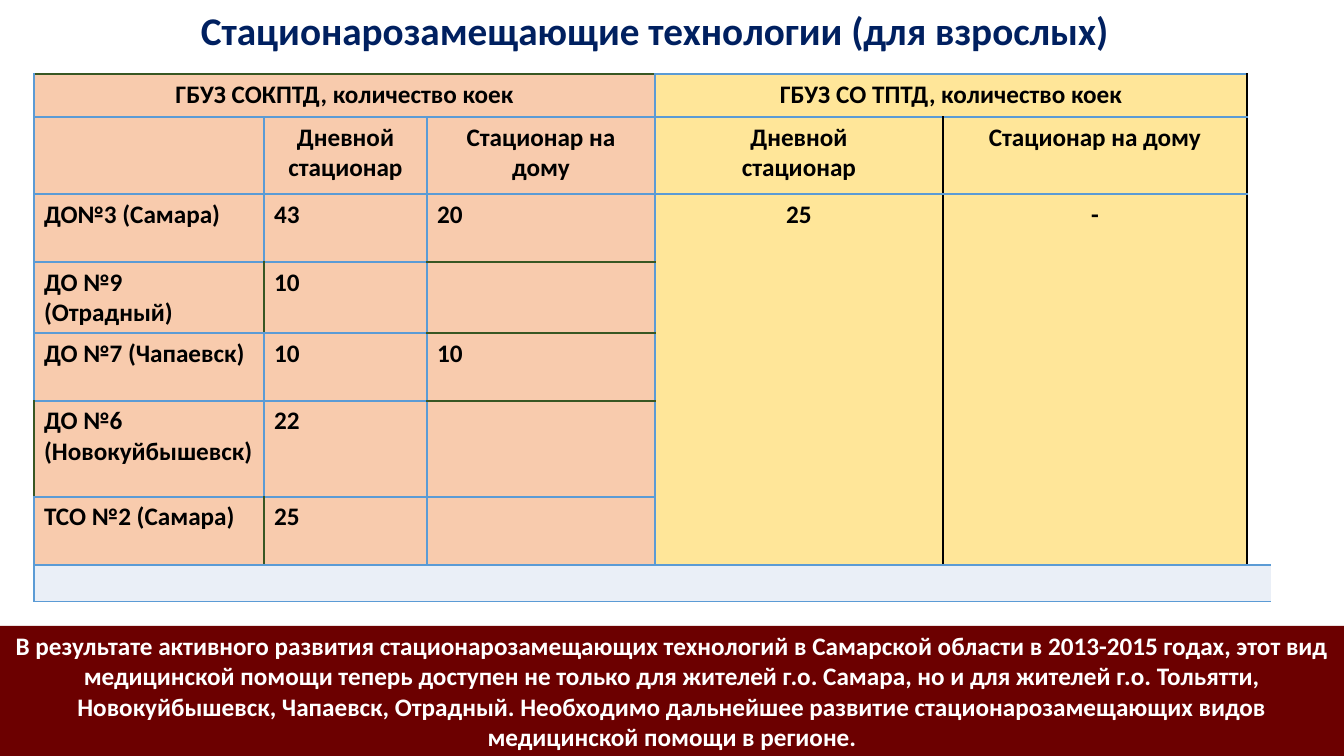
from lxml import etree
from pptx import Presentation
from pptx.dml.color import RGBColor
from pptx.enum.shapes import MSO_SHAPE
from pptx.enum.text import MSO_ANCHOR, PP_ALIGN
from pptx.oxml.ns import qn
from pptx.util import Emu, Pt

RECT = MSO_SHAPE.RECTANGLE
MIDDLE = MSO_ANCHOR.MIDDLE
LEFT, CENTER = PP_ALIGN.LEFT, PP_ALIGN.CENTER

FONT = "Calibri"
NAVY = RGBColor(0x00, 0x20, 0x60)
MAROON = RGBColor(0x6C, 0x00, 0x00)
PEACH = RGBColor(0xF8, 0xCB, 0xAD)
YELLOW = RGBColor(0xFF, 0xE6, 0x99)
PALE = RGBColor(0xEA, 0xEF, 0xF7)
WHITE = RGBColor(0xFF, 0xFF, 0xFF)
BLACK = RGBColor(0x00, 0x00, 0x00)
BLUE = RGBColor(0x5B, 0x9B, 0xD5)
GREEN = RGBColor(0x38, 0x57, 0x23)

TITLE = "Стационарозамещающие технологии (для взрослых)"
SUMMARY = (
    "В результате активного развития стационарозамещающих технологий в "
    "Самарской области в 2013-2015 годах, этот вид медицинской помощи теперь "
    "доступен не только для жителей г.о. Самара, но и для жителей г.о. "
    "Тольятти, Новокуйбышевск, Чапаевск, Отрадный. Необходимо дальнейшее "
    "развитие стационарозамещающих видов медицинской помощи в регионе."
)

COLS = [230, 163, 228, 288, 304, 23]
ROWS = [43, 77, 68, 71, 68, 96, 68, 37]
FOOT, SPACER = len(ROWS) - 1, len(COLS) - 1
BEDS = [
    ["ГБУЗ СОКПТД, количество коек", "", "", "ГБУЗ СО ТПТД, количество коек"],
    ["", "Дневной стационар", "Стационар на дому", "Дневной\nстационар",
     "Стационар на дому"],
    ["ДО№3 (Самара)", "43", "20", "25", "-"],
    ["ДО №9 (Отрадный)", "10"],
    ["ДО №7 (Чапаевск)", "10", "10"],
    ["ДО №6 (Новокуйбышевск)", "22"],
    ["ТСО №2 (Самара)", "25"],
]
# First and last cell of each merged area
MERGES = [((0, 0), (0, 2)), ((0, 3), (0, 4)), ((0, SPACER), (6, SPACER)),
          ((2, 3), (6, 3)), ((2, 4), (6, 4)), ((FOOT, 0), (FOOT, SPACER))]


def px(n):
    return Emu(round(n * 914400 / 100.8))


def write(tf, text, size, color, align):
    for i, line in enumerate(text.split("\n")):
        p = tf.paragraphs[0] if i == 0 else tf.add_paragraph()
        p.alignment = align
        r = p.add_run()
        r.text = line
        r.font.name = FONT
        r.font.size = Pt(size)
        r.font.bold = True
        r.font.color.rgb = color


def add_title(slide):
    sp = slide.shapes.add_textbox(px(64), px(-3), px(1181), px(66))
    tf = sp.text_frame
    tf.word_wrap = True
    tf.vertical_anchor = MIDDLE
    write(tf, TITLE, 28, NAVY, CENTER)


def add_banner(slide):
    sp = slide.shapes.add_shape(RECT, px(0), px(626), px(1344), px(130))
    sp.shadow.inherit = False
    sp.fill.solid()
    sp.fill.fore_color.rgb = MAROON
    sp.line.fill.background()
    tf = sp.text_frame
    tf.word_wrap = True
    tf.vertical_anchor = MIDDLE
    write(tf, SUMMARY, 18, WHITE, CENTER)


def across(y, col):
    """Colour of the horizontal line above row y in one column."""
    if y in (FOOT, FOOT + 1):
        return BLUE
    if col == SPACER or (col >= 3 and y > 2):
        return None
    if (y == 0 and col < 3) or (col == 2 and y in (3, 4, 5)):
        return GREEN
    return BLUE


def down(row, x):
    """Colour of the vertical line left of column x in one row."""
    if row == FOOT:
        return BLUE if x in (0, SPACER + 1) else None
    if x > SPACER or (row == 0 and x in (1, 2, 4)):
        return None
    if x in (4, SPACER):
        return BLACK
    if (row, x) in ((3, 1), (6, 1), (5, 0)):
        return GREEN
    return BLUE


def set_border(cell, tag, color):
    ln = etree.SubElement(cell._tc.get_or_add_tcPr(), qn(tag), w=str(Pt(1)))
    if color is None:
        etree.SubElement(ln, qn("a:noFill"))
    else:
        fill = etree.SubElement(ln, qn("a:solidFill"))
        etree.SubElement(fill, qn("a:srgbClr"), val=str(color))


def cell_fill(row, col):
    if row == FOOT:
        return PALE
    if col == SPACER:
        return WHITE
    return PEACH if col < 3 else YELLOW


def style_cell(cell, row, col):
    set_border(cell, "a:lnL", down(row, col))
    set_border(cell, "a:lnR", down(row, col + 1))
    set_border(cell, "a:lnT", across(row, col))
    set_border(cell, "a:lnB", across(row + 1, col))
    cell.fill.solid()
    cell.fill.fore_color.rgb = cell_fill(row, col)


def add_beds_table(slide):
    frame = slide.shapes.add_table(len(ROWS), len(COLS), px(34), px(74),
                                   px(sum(COLS)), px(sum(ROWS)))
    table = frame.table
    table.first_row = False
    table.horz_banding = False
    for column, width in zip(table.columns, COLS):
        column.width = px(width)
    for table_row, height in zip(table.rows, ROWS):
        table_row.height = px(height)

    for row in range(len(ROWS)):
        for col in range(len(COLS)):
            cell = table.cell(row, col)
            style_cell(cell, row, col)
            # Small empty text keeps the foot row at its set height
            p = cell.text_frame.paragraphs[0]
            p._p.get_or_add_endParaRPr().set("sz", "1200")

    for row, texts in enumerate(BEDS):
        for col, text in enumerate(texts):
            if text:
                align = CENTER if row < 2 or col >= 3 else LEFT
                write(table.cell(row, col).text_frame, text, 18, BLACK, align)

    for first, last in MERGES:
        table.cell(*first).merge(table.cell(*last))


def main():
    prs = Presentation()
    prs.slide_width, prs.slide_height = px(1344), px(756)
    slide = prs.slides.add_slide(prs.slide_layouts[6])
    add_title(slide)
    add_banner(slide)
    add_beds_table(slide)
    prs.save("out.pptx")


if __name__ == "__main__":
    main()
